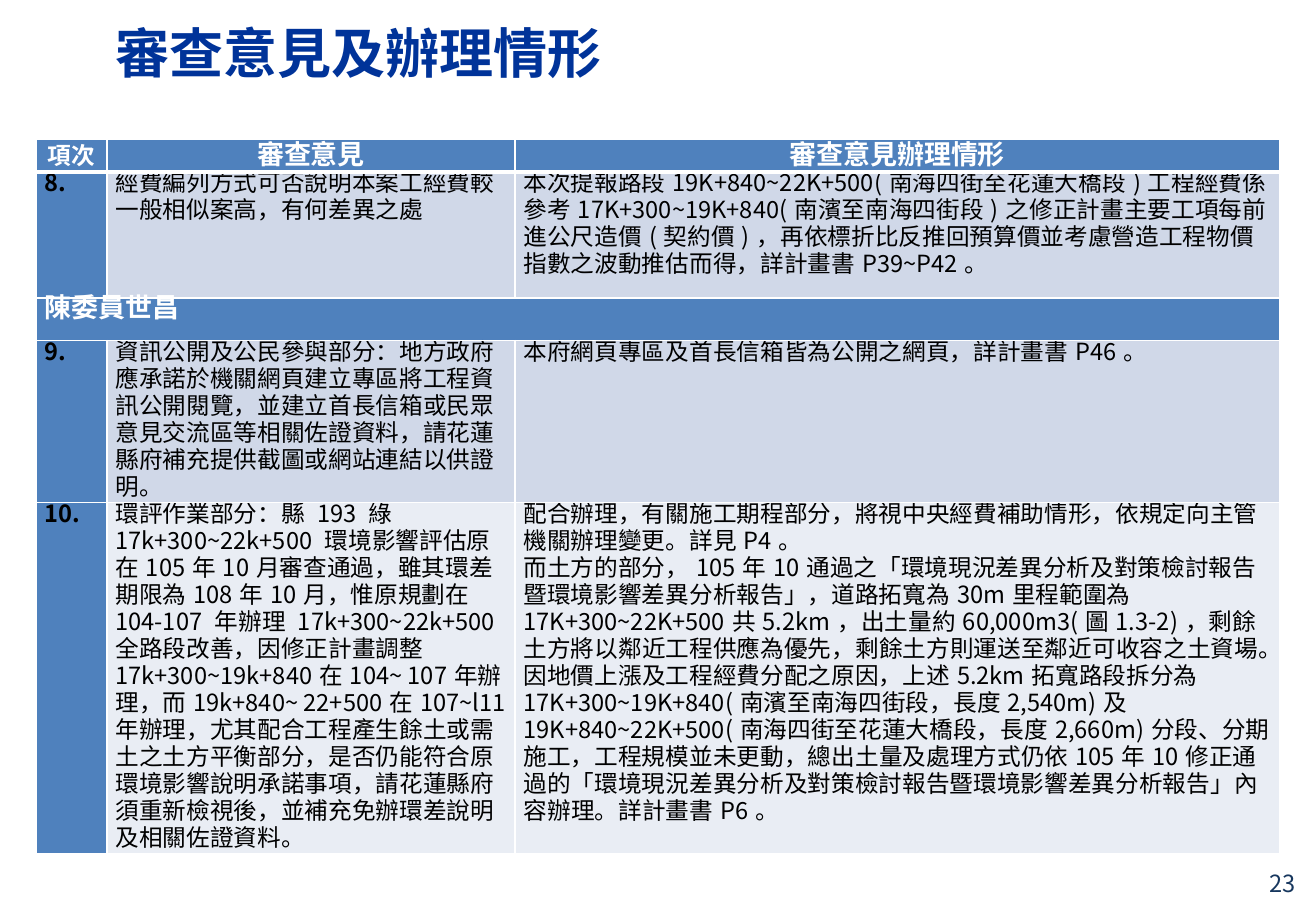
import pptx
import pptx.util
import pptx.dml.color
import pptx.enum.text
import pptx.oxml
import pptx.oxml.ns
from pptx.util import Inches

COLORS = {"title": "003399", "number": "17375E", "accent": "4F81BD", "band": "D0D8E8",
          "pale": "E9EDF4", "white": "FFFFFF", "black": "000000"}
FONT = "Noto Sans CJK SC"
ALIGN = pptx.enum.text.PP_ALIGN
ANCHOR = pptx.enum.text.MSO_ANCHOR

COLUMN_WIDTHS = [0.58, 3.36, 6.29]
ROW_HEIGHTS = [0.26, 1.04, 0.35, 1.33, 2.89]
HEADINGS = ["項次", "審查意見", "審查意見辦理情形"]
MEMBER = "陳委員世昌"
# Table row, item number, opinion, paragraphs of the response, fill
ITEMS = [
    (1, "8.", "經費編列方式可否說明本案工經費較一般相似案高，有何差異之處",
     ["本次提報路段19K+840~22K+500(南海四街至花蓮大橋段)工程經費係參考17K+300~19K+840(南濱至南海四街段)"
      "之修正計畫主要工項每前進公尺造價(契約價)，再依標折比反推回預算價並考慮營造工程物價指數之波動推估而得，"
      "詳計畫書P39~P42。"], "band"),
    (3, "9.", "資訊公開及公民參與部分：地方政府應承諾於機關網頁建立專區將工程資訊公開閱覽，"
     "並建立首長信箱或民眾意見交流區等相關佐證資料，請花蓮縣府補充提供截圖或網站連結以供證明。",
     ["本府網頁專區及首長信箱皆為公開之網頁，詳計畫書P46。"], "band"),
    (4, "10.", "環評作業部分：縣 193 綠 17k+300~22k+500 環境影響評估原在105年10月審查通過，"
     "雖其環差期限為108年10月，惟原規劃在 104-107 年辦理 17k+300~22k+500全路段改善，"
     "因修正計畫調整 17k+300~19k+840在104~ 107年辦理，而19k+840~ 22+500在107~l11年辦理，"
     "尤其配合工程產生餘土或需土之土方平衡部分，是否仍能符合原環境影響說明承諾事項，"
     "請花蓮縣府須重新檢視後，並補充免辦環差說明及相關佐證資料。",
     ["配合辦理，有關施工期程部分，將視中央經費補助情形，依規定向主管機關辦理變更。詳見P4。",
      "而土方的部分，105年10通過之「環境現況差異分析及對策檢討報告暨環境影響差異分析報告」，"
      "道路拓寬為30m里程範圍為17K+300~22K+500共5.2km，出土量約60,000m3(圖1.3-2)，"
      "剩餘土方將以鄰近工程供應為優先，剩餘土方則運送至鄰近可收容之土資場。",
      "因地價上漲及工程經費分配之原因，上述5.2km拓寬路段拆分為17K+300~19K+840(南濱至南海四街段，長度2,540m)"
      "及19K+840~22K+500(南海四街至花蓮大橋段，長度2,660m)分段、分期施工，工程規模並未更動，"
      "總出土量及處理方式仍依105年10修正通過的「環境現況差異分析及對策檢討報告暨環境影響差異分析報告」"
      "內容辦理。詳計畫書P6。"], "pale"),
]


def write(frame, paragraphs, size=14, color="black", bold=False, align=ALIGN.LEFT, spacing=None):
    """Fill a text frame with one formatted run per paragraph; spacing is in points."""
    frame.word_wrap = True
    for index, text in enumerate(paragraphs):
        paragraph = frame.paragraphs[0] if index == 0 else frame.add_paragraph()
        paragraph.alignment = align
        paragraph.space_before = pptx.util.Pt(0)
        if spacing:
            paragraph.line_spacing = pptx.util.Pt(spacing)
        run = paragraph.add_run()
        run.text = text
        run.font.name = FONT
        run.font.size = pptx.util.Pt(size)
        run.font.bold = bold
        run.font.color.rgb = pptx.dml.color.RGBColor.from_string(COLORS[color])
        east_asian = pptx.oxml.parse_xml(
            f'<a:ea {pptx.oxml.ns.nsdecls("a")} typeface="{FONT}"/>')
        run.font._element.find(pptx.oxml.ns.qn("a:latin")).addnext(east_asian)


class ReviewSlide:
    def __init__(self, presentation):
        self.slide = presentation.slides.add_slide(presentation.slide_layouts[5])

    def title(self, text, left, top, width, height):
        heading = self.slide.shapes.title
        heading.left, heading.top = Inches(left), Inches(top)
        heading.width, heading.height = Inches(width), Inches(height)
        heading.text_frame.auto_size = pptx.enum.text.MSO_AUTO_SIZE.NONE
        heading.text_frame.vertical_anchor = ANCHOR.MIDDLE
        write(heading.text_frame, [text], size=32, color="title", bold=True, spacing=20)

    def page_number(self, text, left, top, width, height):
        number = self.slide.shapes.add_textbox(
            Inches(left), Inches(top), Inches(width), Inches(height))
        write(number.text_frame, [text], color="number", align=ALIGN.CENTER)

    def table(self, left, top, widths, heights):
        grid = self.slide.shapes.add_table(
            len(heights), len(widths), Inches(left), Inches(top),
            Inches(sum(widths)), Inches(sum(heights))).table
        for column, width in zip(grid.columns, widths):
            column.width = Inches(width)
        for row, height in zip(grid.rows, heights):
            row.height = Inches(height)
        return grid

    def cell(self, cell, paragraphs, fill, top_line=1, bottom_line=1, spacing=16, **style):
        cell.margin_left = cell.margin_right = Inches(0.07)
        cell.margin_top = cell.margin_bottom = 0
        cell.vertical_anchor = ANCHOR.TOP
        cell.fill.solid()
        cell.fill.fore_color.rgb = pptx.dml.color.RGBColor.from_string(COLORS[fill])
        write(cell.text_frame, paragraphs, spacing=spacing, **style)
        properties = cell._tc.get_or_add_tcPr()
        sides = {"L": 1, "R": 1, "T": top_line, "B": bottom_line}
        for index, (side, points) in enumerate(sides.items()):
            properties.insert(index, pptx.oxml.parse_xml(
                f'<a:ln{side} {pptx.oxml.ns.nsdecls("a")} w="{pptx.util.Pt(points)}">'
                f'<a:solidFill><a:srgbClr val="{COLORS["white"]}"/></a:solidFill></a:ln{side}>'))


def main():
    presentation = pptx.Presentation()
    presentation.slide_width, presentation.slide_height = Inches(10.83), Inches(7.5)
    page = ReviewSlide(presentation)
    page.title("審查意見及辦理情形", 0.85, 0.25, 5.43, 0.61)

    review = page.table(0.3, 1.15, COLUMN_WIDTHS, ROW_HEIGHTS)
    for column, heading in enumerate(HEADINGS):
        page.cell(review.cell(0, column), [heading], "accent", bottom_line=3, spacing=19,
                  size=14 if column == 0 else 16, color="white", bold=True, align=ALIGN.CENTER)
    for row, number, opinion, response, fill in ITEMS:
        top_line = 3 if row == 1 else 1
        page.cell(review.cell(row, 0), [number], "accent", top_line=top_line, bold=True)
        page.cell(review.cell(row, 1), [opinion], fill, top_line=top_line)
        page.cell(review.cell(row, 2), response, fill, top_line=top_line)
    review.cell(2, 0).merge(review.cell(2, 2))
    page.cell(review.cell(2, 0), [MEMBER], "accent", size=16, color="white", bold=True)

    page.page_number("23", 10.25, 7.1, 0.61, 0.28)
    presentation.save("out.pptx")


if __name__ == "__main__":
    main()
